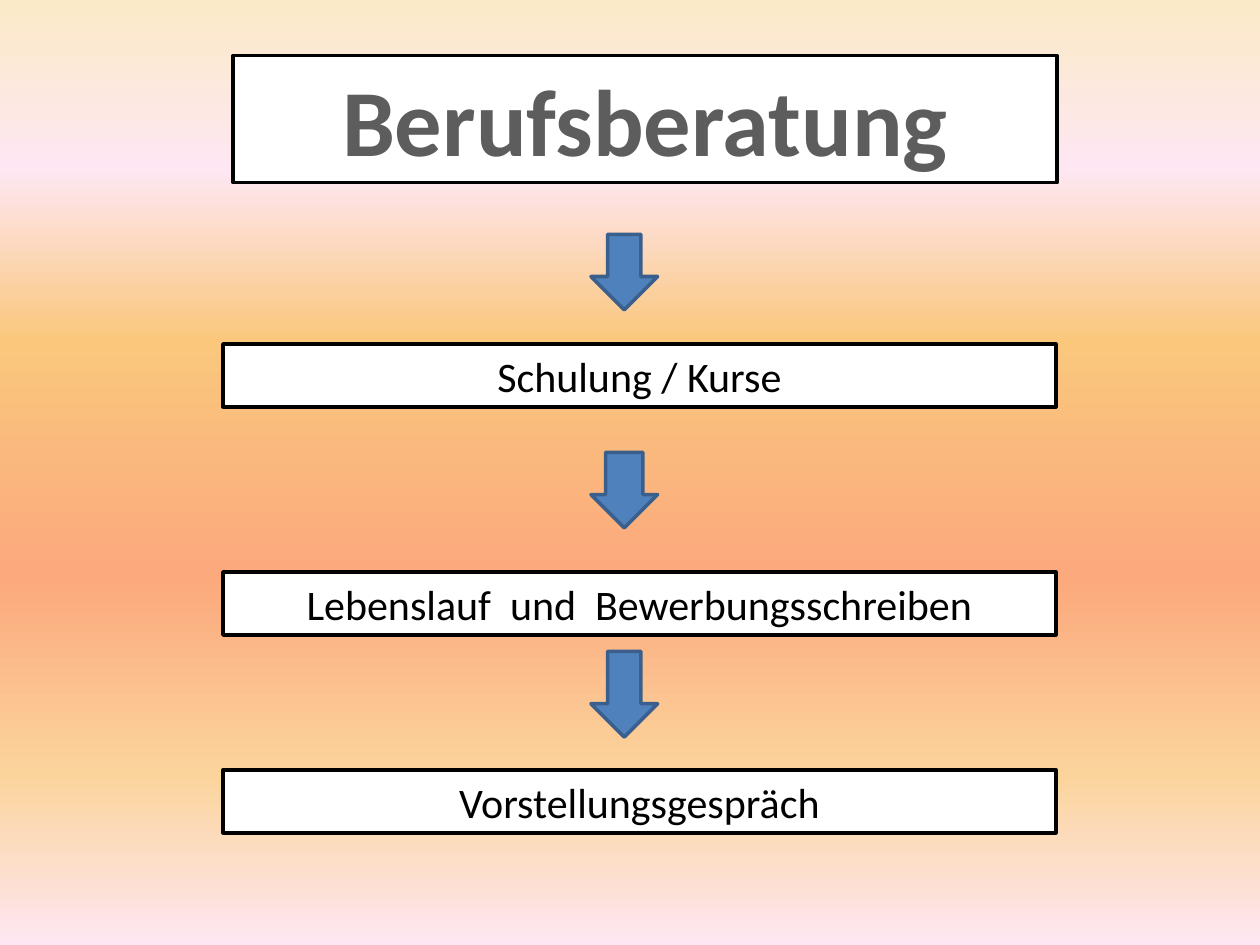
from lxml.etree import SubElement
from pptx import Presentation
from pptx.dml.color import RGBColor
from pptx.enum.shapes import MSO_SHAPE
from pptx.enum.text import MSO_ANCHOR, MSO_AUTO_SIZE, PP_ALIGN
from pptx.oxml.ns import qn
from pptx.util import Inches, Pt

COLORS = {
    "box": "FFFFFF",
    "box_line": "000000",
    "title": "5D5D5D",
    "text": "000000",
    "arrow": "4F81BD",
    "arrow_line": "3A5F8C",
}
SUNSET = [(0, "FBEAC7"), (18, "FEE7F2"), (36, "FAC77D"),
          (61, "FBA97D"), (82, "FBD49C"), (100, "FEE7F2")]


def add_outlined(preset, left, top, width, height, fill, line):
    shape = slide.shapes.add_shape(
        preset, Inches(left), Inches(top), Inches(width), Inches(height))
    shape.shadow.inherit = False
    shape.fill.solid()
    shape.fill.fore_color.rgb = RGBColor.from_string(COLORS[fill])
    shape.line.color.rgb = RGBColor.from_string(COLORS[line])
    shape.line.width = Pt(2)
    return shape


prs = Presentation()
prs.slide_width = Inches(10)
prs.slide_height = Inches(7.5)
slide = prs.slides.add_slide(prs.slide_layouts[6])

# Background: vertical gradient with six stops
backdrop = slide.background.fill
backdrop.gradient()
backdrop.gradient_angle = 270
stop_list = next(slide.background._cSld.iter(qn("a:gsLst")))
for stop in list(stop_list):
    stop_list.remove(stop)
for percent, color in SUNSET:
    stop = SubElement(stop_list, qn("a:gs"), pos=str(percent * 1000))
    SubElement(stop, qn("a:srgbClr"), val=color)

# Steps: text, left, top, width, height, font size, bold, colour
steps = [("Berufsberatung", 1.85, 0.44, 6.54, 1.01, 54, True, "title")]
for text, top in [("Schulung / Kurse", 2.73),
                  ("Lebenslauf  und  Bewerbungsschreiben", 4.54),
                  ("Vorstellungsgespräch", 6.11)]:
    steps.append((text, 1.77, top, 6.61, 0.5, 24, False, "text"))

for text, left, top, width, height, size, bold, color in steps:
    step = add_outlined(MSO_SHAPE.RECTANGLE, left, top, width, height,
                        "box", "box_line")
    frame = step.text_frame
    frame.word_wrap = True
    frame.auto_size = MSO_AUTO_SIZE.SHAPE_TO_FIT_TEXT
    frame.vertical_anchor = MSO_ANCHOR.TOP
    paragraph = frame.paragraphs[0]
    paragraph.text = text
    paragraph.alignment = PP_ALIGN.CENTER
    paragraph.font.name = "Calibri"
    paragraph.font.size = Pt(size)
    paragraph.font.bold = bold
    paragraph.font.color.rgb = RGBColor.from_string(COLORS[color])

# Arrows between the steps: top, height, shaft share of the width
for top, height, shaft in [(1.86, 0.6, 0.5), (3.59, 0.6, 0.56), (5.17, 0.68, 0.5)]:
    arrow = add_outlined(MSO_SHAPE.DOWN_ARROW, 4.69, top, 0.53, height,
                         "arrow", "arrow_line")
    arrow.adjustments[0] = shaft

prs.save("out.pptx")
